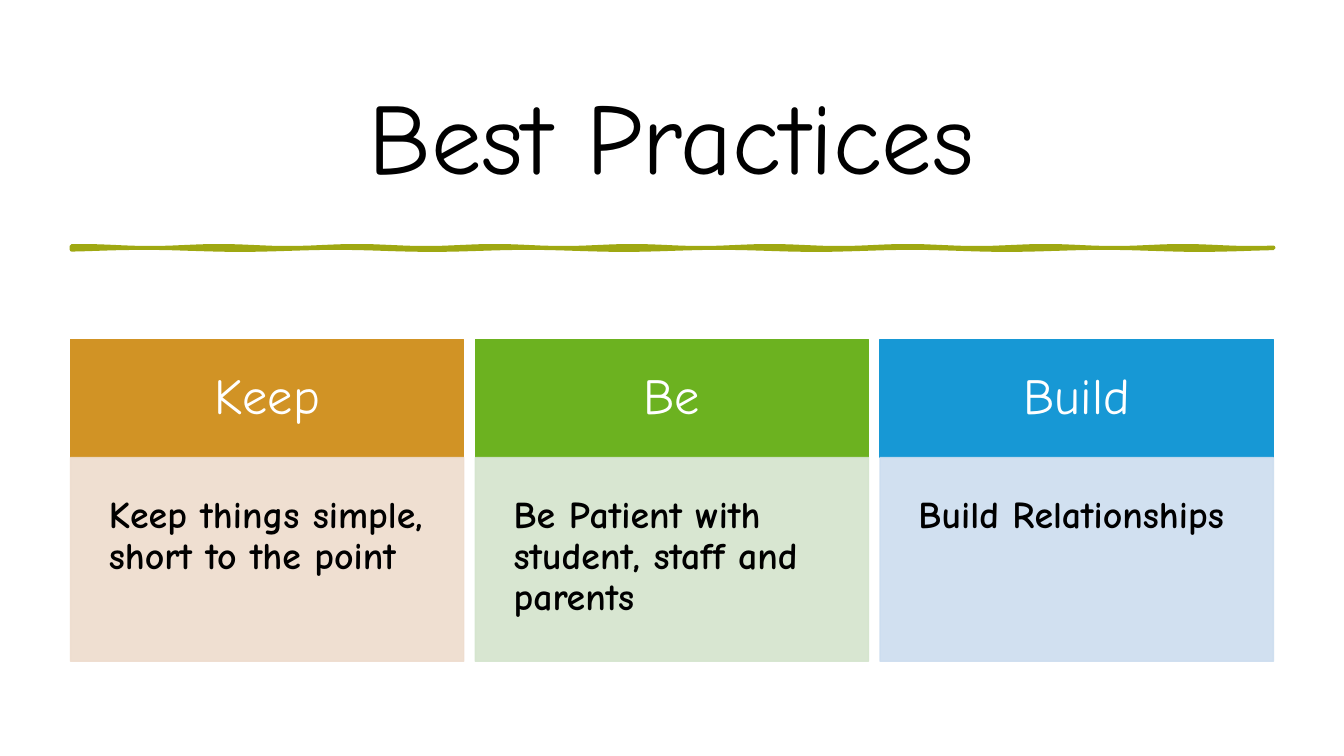
import math

import pptx
import pptx.dml.color
import pptx.enum.shapes
import pptx.enum.text
import pptx.oxml
import pptx.oxml.ns
import pptx.util

RGB = pptx.dml.color.RGBColor
ALIGN = pptx.enum.text.PP_ALIGN
ANCHOR = pptx.enum.text.MSO_ANCHOR
Inches, Pt = pptx.util.Inches, pptx.util.Pt

BLACK, WHITE = RGB(0x00, 0x00, 0x00), RGB(0xFF, 0xFF, 0xFF)
OLIVE = RGB(0x9F, 0xA8, 0x12)
ORANGE, PALE_ORANGE = RGB(0xD1, 0x93, 0x25), RGB(0xEE, 0xDC, 0xCD)
GREEN, PALE_GREEN = RGB(0x6C, 0xB2, 0x20), RGB(0xD4, 0xE4, 0xCD)
BLUE, PALE_BLUE = RGB(0x17, 0x98, 0xD5), RGB(0xCC, 0xDD, 0xEF)
FONT = "Comic Neue"

# Grid of three columns, in inches
LEFT, COL_W, GAP = 0.7, 3.9, 0.115
HEAD_TOP, HEAD_H, BODY_H = 3.37, 1.17, 2.02
RULE_LEFT, RULE_RIGHT, RULE_Y = 0.71, 12.63, 2.46

TITLE_FONT = {"name": FONT, "size": Pt(72), "bold": False}
HEAD_FONT = {"name": FONT, "size": Pt(36), "bold": False}
BODY_FONT = {"name": FONT, "size": Pt(27), "bold": True}

PRACTICES = [
    ("Keep", "Keep things simple, short to the point", ORANGE, PALE_ORANGE),
    ("Be", "Be Patient with student, staff and parents", GREEN, PALE_GREEN),
    ("Build", "Build Relationships", BLUE, PALE_BLUE),
]


def write(tf, text, font, color, align, anchor):
    tf.word_wrap = True
    tf.auto_size = pptx.enum.text.MSO_AUTO_SIZE.NONE
    tf.vertical_anchor = anchor
    p = tf.paragraphs[0]
    p.alignment, p.line_spacing = align, 0.9
    r = p.add_run()
    r.text = text
    for key, value in font.items():
        setattr(r.font, key, value)
    r.font.color.rgb = color


def paint(sp, color, width, opacity=100):
    sp.shadow.inherit = False
    sp.fill.solid()
    sp.fill.fore_color.rgb = color
    sp.line.color.rgb = color
    sp.line.width = Pt(width)
    if opacity < 100:
        for clr in sp.element.spPr.iter(pptx.oxml.ns.qn("a:srgbClr")):
            alpha = pptx.oxml.parse_xml(
                f'<a:alpha {pptx.oxml.ns.nsdecls("a")} val="{opacity * 1000}"/>')
            clr.append(alpha)


def add_panel(s, col, top, height, color, opacity, inset):
    x = LEFT + col * (COL_W + GAP)
    sp = s.shapes.add_shape(pptx.enum.shapes.MSO_SHAPE.RECTANGLE, Inches(x),
                            Inches(top), Inches(COL_W), Inches(height))
    paint(sp, color, 1, opacity)
    for side in ("left", "top", "right", "bottom"):
        setattr(sp.text_frame, f"margin_{side}", Inches(inset))
    return sp.text_frame


def add_title(s, text):
    sp = s.shapes.title
    sp.left, sp.top = Inches(0.69), Inches(0.69)
    sp.width, sp.height = Inches(11.94), Inches(1.44)
    write(sp.text_frame, text, TITLE_FONT, BLACK, ALIGN.CENTER, ANCHOR.MIDDLE)


def add_wavy_rule(s):
    steps = 120
    xs = [RULE_LEFT + (RULE_RIGHT - RULE_LEFT) * i / steps
          for i in range(steps + 1)]
    lower = [(x, RULE_Y + 0.01 + 0.01 * math.sin(3.3 * x)) for x in xs]
    upper = [(x, RULE_Y - 0.01 + 0.01 * math.sin(4.6 * x + 1)) for x in xs]
    points = [(Inches(x), Inches(y)) for x, y in lower + upper[::-1]]
    builder = s.shapes.build_freeform(*points[0], scale=1.0)
    builder.add_line_segments(points[1:], close=True)
    paint(builder.convert_to_shape(), OLIVE, 2.75)


def main():
    prs = pptx.Presentation()
    prs.slide_width, prs.slide_height = Inches(13.33), Inches(7.5)
    s = prs.slides.add_slide(prs.slide_layouts[5])

    # Title and hand-drawn rule
    add_title(s, "Best Practices")
    add_wavy_rule(s)

    # One column per practice: heading above, detail below
    for col, (head, detail, strong, pale) in enumerate(PRACTICES):
        tf = add_panel(s, col, HEAD_TOP, HEAD_H, strong, 100, 0.31)
        write(tf, head, HEAD_FONT, WHITE, ALIGN.CENTER, ANCHOR.MIDDLE)
        tf = add_panel(s, col, HEAD_TOP + HEAD_H, BODY_H, pale, 90, 0.38)
        write(tf, detail, BODY_FONT, BLACK, ALIGN.LEFT, ANCHOR.TOP)

    prs.save("out.pptx")


if __name__ == "__main__":
    main()
